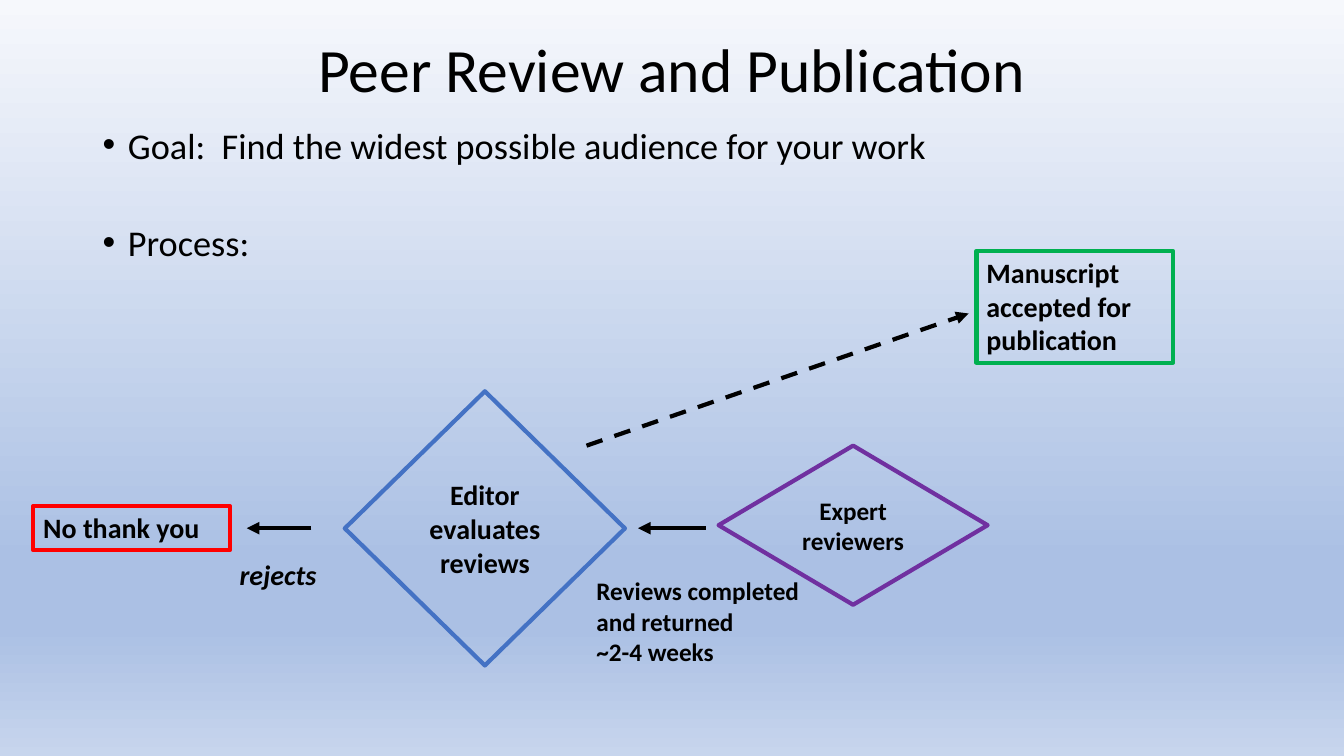
from lxml.etree import SubElement
from pptx import Presentation
from pptx.dml.color import RGBColor
from pptx.enum.dml import MSO_LINE_DASH_STYLE as Dash
from pptx.enum.shapes import MSO_CONNECTOR as Connector, MSO_SHAPE as Shape
from pptx.enum.text import MSO_ANCHOR as Anchor, MSO_AUTO_SIZE as AutoSize, PP_ALIGN as Align
from pptx.oxml.ns import qn
from pptx.util import Cm, Pt

BLACK = RGBColor(0x00, 0x00, 0x00)
BLUE = RGBColor(0x44, 0x72, 0xC4)
RED = RGBColor(0xFF, 0x00, 0x00)
PURPLE = RGBColor(0x70, 0x30, 0xA0)
GREEN = RGBColor(0x00, 0xB0, 0x50)
SKY = [
    (0, RGBColor(0xF6, 0xF8, 0xFC)),
    (74, RGBColor(0xAB, 0xC0, 0xE4)),
    (83, RGBColor(0xAB, 0xC0, 0xE4)),
    (100, RGBColor(0xC7, 0xD5, 0xED)),
]


def write(frame, lines, size, align, spacing=1.0, **style):
    frame.text = "\n".join(lines)
    for paragraph in frame.paragraphs:
        paragraph.alignment = align
        paragraph.line_spacing = spacing
        font_format = {"name": "Calibri", "size": Pt(size), **style}
        for run in paragraph.runs:
            run.font.color.rgb = BLACK
            for attribute, value in font_format.items():
                setattr(run.font, attribute, value)


presentation = Presentation()
presentation.slide_width = Cm(33.87)
presentation.slide_height = Cm(19.05)
slide = presentation.slides.add_slide(presentation.slide_layouts[1])

sky_fill = slide.background.fill
sky_fill.gradient()
sky_fill.gradient_angle = 270
stops = slide.element.find(".//" + qn("a:gsLst"))
stops.clear()
for percent, color in SKY:
    stop = SubElement(stops, qn("a:gs"), pos=str(percent * 1000))
    SubElement(stop, qn("a:srgbClr"), val=str(color))

title, goals = slide.placeholders
for part, top, height, anchor in [
    (title, 0, 3.68, Anchor.MIDDLE),
    (goals, 3.18, 3.78, Anchor.TOP),
]:
    part.left, part.top, part.width, part.height = Cm(2.33), Cm(top), Cm(29.21), Cm(height)
    part.text_frame.auto_size = AutoSize.NONE
    part.text_frame.vertical_anchor = anchor

write(title.text_frame, ["Peer Review and Publication"], 44, Align.CENTER, 0.9)
write(
    goals.text_frame,
    ["Goal:  Find the widest possible audience for your work", "Process:"],
    25.9, Align.LEFT, 0.8,
)
for goal, space in zip(goals.text_frame.paragraphs, (10, 45)):
    goal.space_before = Pt(space)
    indents = goal._p.get_or_add_pPr()
    indents.set("marL", str(Cm(0.64)))
    indents.set("indent", str(-Cm(0.64)))
    SubElement(indents, qn("a:buChar"), char="•")

for outline, color, left, top, width, height, lines, size in [
    (Shape.DIAMOND, BLUE, 8.69, 9.86, 7.06, 6.91, ["Editor evaluates reviews"], 20),
    (Shape.DIAMOND, PURPLE, 18.11, 11.23, 6.78, 4.01, ["Expert reviewers"], 18),
    (Shape.RECTANGLE, RED, 0.84, 12.75, 4.95, 1.12, ["No thank you"], 20),
    (Shape.RECTANGLE, GREEN, 24.61, 6.32, 4.95, 2.82, ["Manuscript accepted for publication"], 20),
]:
    step = slide.shapes.add_shape(outline, Cm(left), Cm(top), Cm(width), Cm(height))
    step.shadow.inherit = False
    step.fill.background()
    step.line.color.rgb = color
    step.line.width = Pt(3)
    is_diamond = outline == Shape.DIAMOND
    step.text_frame.word_wrap = True
    step.text_frame.vertical_anchor = Anchor.MIDDLE if is_diamond else Anchor.TOP
    write(step.text_frame, lines, size, Align.CENTER if is_diamond else Align.LEFT, bold=True)

for left, top, width, height, lines, size, wrap, italic in [
    (5.79, 13.92, 2.46, 1.12, ["rejects"], 20, False, True),
    (14.78, 14.38, 6.32, 2.57, ["Reviews completed and returned", "~2-4 weeks"], 18, True, False),
]:
    caption = slide.shapes.add_textbox(Cm(left), Cm(top), Cm(width), Cm(height))
    caption.text_frame.word_wrap = wrap
    write(caption.text_frame, lines, size, Align.LEFT, bold=True, italic=italic)

for start_x, start_y, end_x, end_y, dash in [
    (7.85, 13.31, 6.22, 13.31, Dash.SOLID),
    (17.78, 13.31, 16.08, 13.31, Dash.SOLID),
    (14.78, 11.23, 24.41, 7.9, Dash.DASH),
]:
    arrow = slide.shapes.add_connector(
        Connector.STRAIGHT, Cm(start_x), Cm(start_y), Cm(end_x), Cm(end_y)
    )
    for attribute, value in {"width": Pt(3), "dash_style": dash}.items():
        setattr(arrow.line, attribute, value)
    arrow.line.color.rgb = BLACK
    SubElement(arrow.line._get_or_add_ln(), qn("a:tailEnd"), type="triangle")
    SubElement(arrow._element.spPr, qn("a:effectLst"))

presentation.save("out.pptx")
